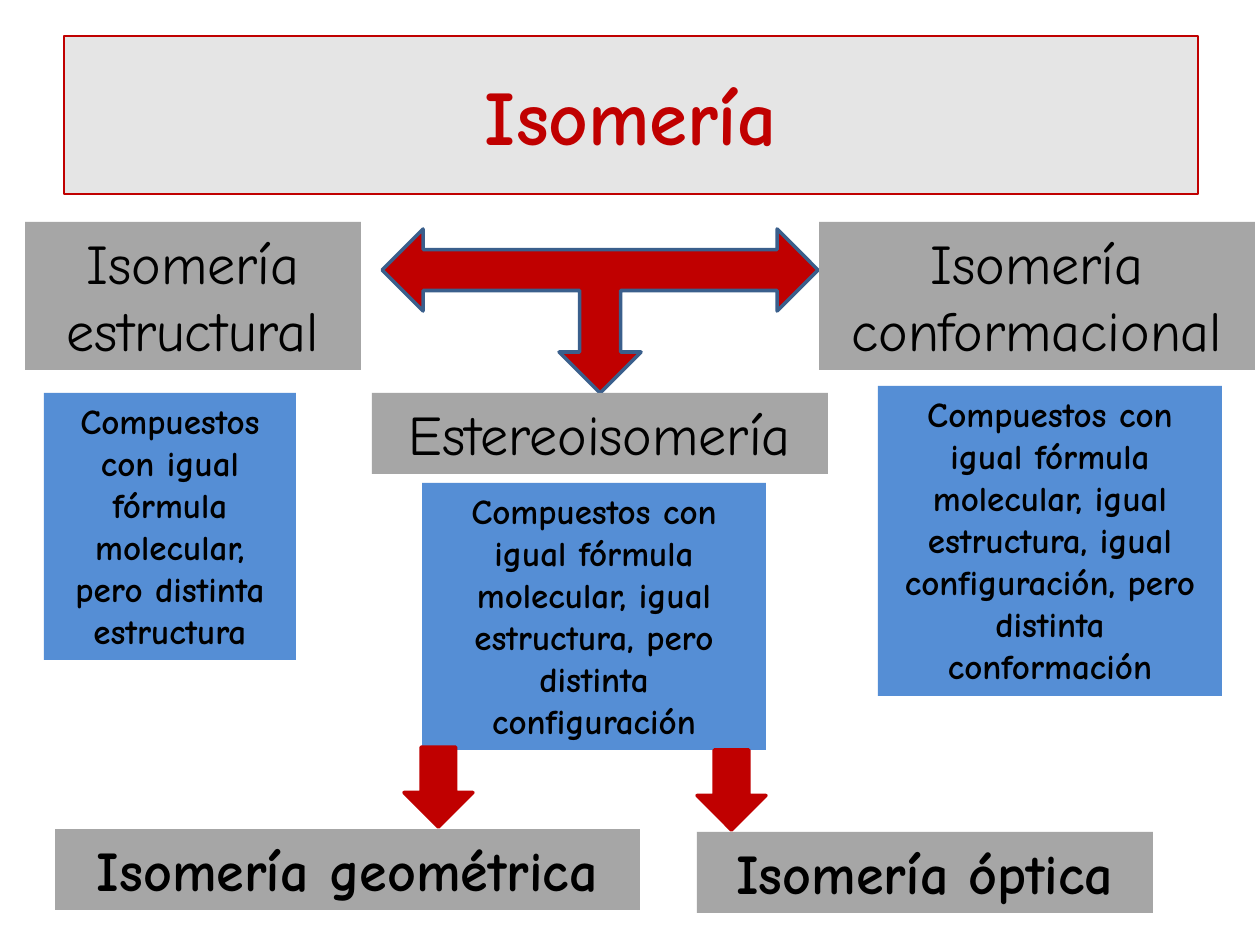
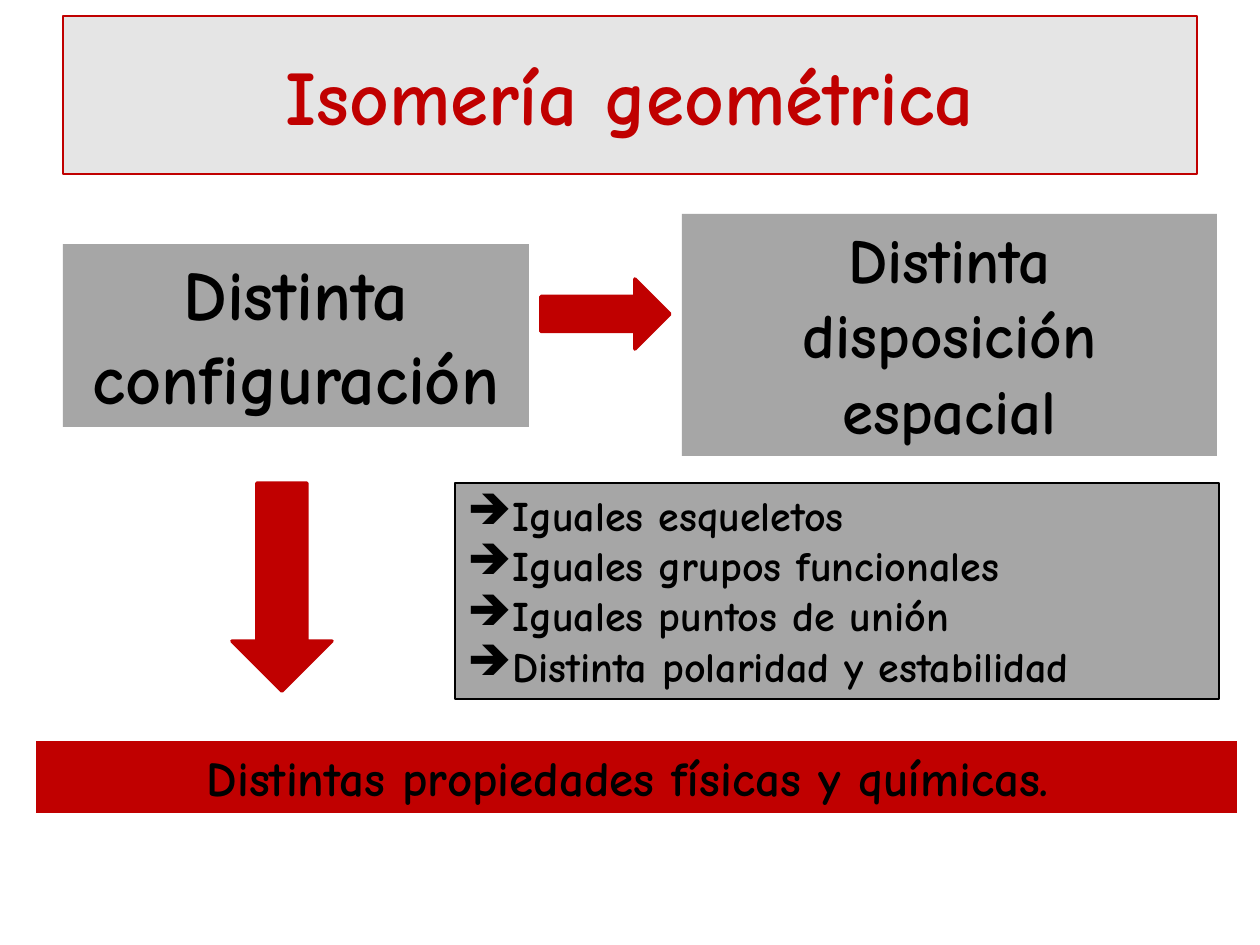
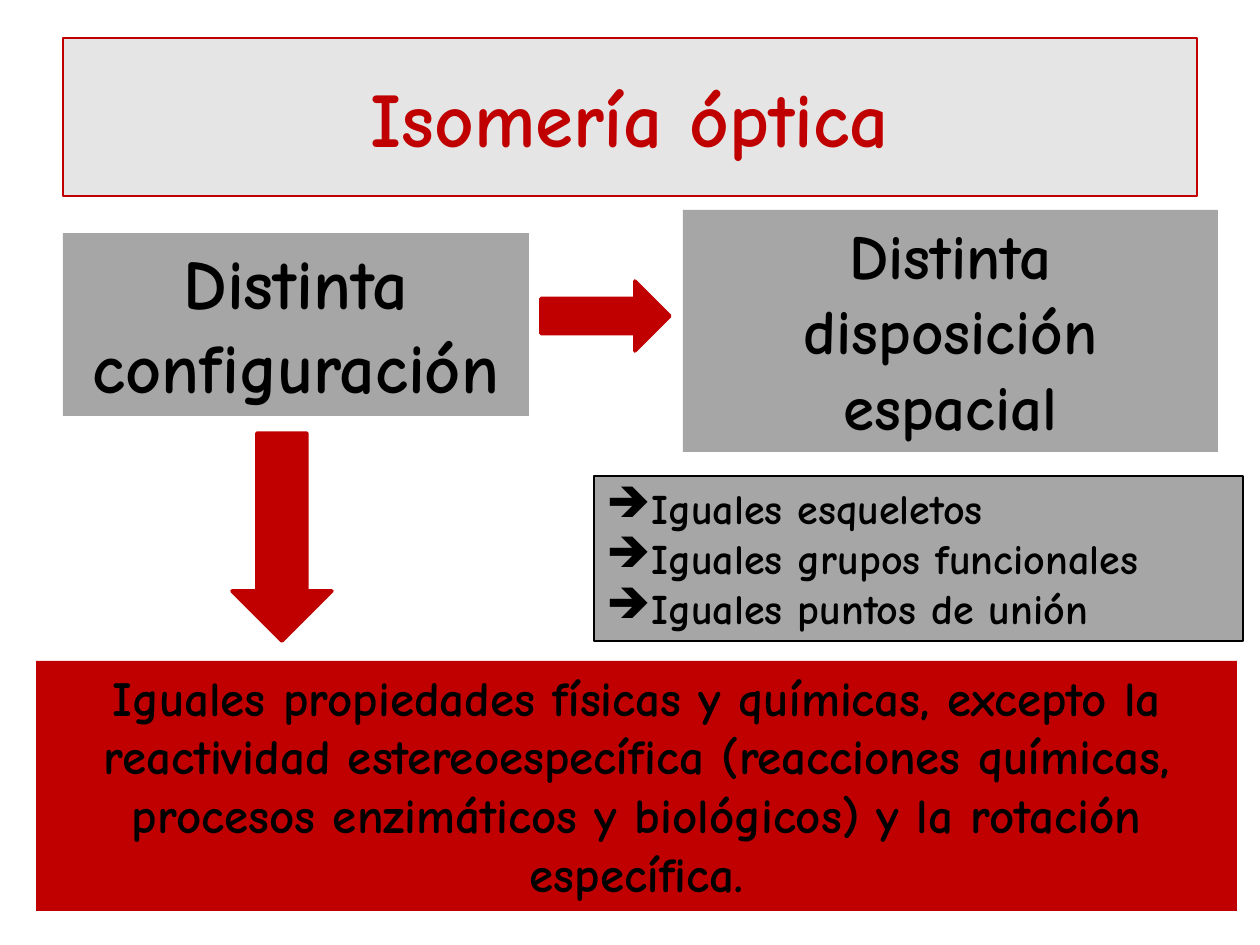
from dataclasses import dataclass

from lxml import etree
from pptx import Presentation
from pptx.dml.color import RGBColor
from pptx.enum.shapes import MSO_SHAPE
from pptx.enum.text import MSO_ANCHOR, MSO_AUTO_SIZE, PP_ALIGN
from pptx.oxml.ns import qn
from pptx.util import Pt

RECT = MSO_SHAPE.RECTANGLE
DOWN, RIGHT = MSO_SHAPE.DOWN_ARROW, MSO_SHAPE.RIGHT_ARROW
TEE = MSO_SHAPE.LEFT_RIGHT_UP_ARROW
CENTER, LEFT = PP_ALIGN.CENTER, PP_ALIGN.LEFT
MIDDLE, TOP = MSO_ANCHOR.MIDDLE, MSO_ANCHOR.TOP
FIT_SHAPE, NO_FIT = MSO_AUTO_SIZE.SHAPE_TO_FIT_TEXT, MSO_AUTO_SIZE.NONE

EMU_PER_PX = 914400 / 126
SLIDE_SIZE = (1260, 945)


@dataclass(frozen=True)
class Theme:
    font: str = "Comic Neue"
    red: str = "C00000"
    gray: str = "A6A6A6"
    blue: str = "558ED5"
    navy: str = "3A5F8C"
    black: str = "000000"
    title: int = 44
    cause: int = 40
    effect: int = 36
    branch: int = 32
    result: int = 28
    shared: int = 24
    definition: int = 20
    thin: float = 0.75
    thick: float = 2
    title_alpha: int = 29
    bullet: str = "➔"
    bullet_indent: int = 39


T = Theme()

# Boxes are (left, top, width, height) in px.
OVERVIEW = {
    "title": ("Isomería", (64, 36, 1134, 158)),
    "tee": (382, 229, 436, 164),
    "branches": [
        ("Isomería estructural", (25, 222, 336, 148)),
        ("Estereoisomería", (372, 393, 456, 81)),
        ("Isomería conformacional", (819, 222, 436, 148)),
    ],
    "definitions": [
        ("Compuestos con igual fórmula molecular, pero distinta estructura",
         (44, 393, 252, 267)),
        ("Compuestos con igual fórmula molecular, igual estructura, "
         "pero distinta configuración", (422, 483, 344, 267)),
        ("Compuestos con igual fórmula molecular, igual estructura, "
         "igual configuración, pero distinta conformación",
         (878, 386, 344, 310)),
    ],
    "arrows": [(404, 747, 69, 80), (697, 750, 69, 80)],
    "subtypes": [
        ("Isomería geométrica", (55, 829, 585, 81)),
        ("Isomería óptica", (697, 832, 456, 81)),
    ],
}

CAUSE, EFFECT = "Distinta configuración", "Distinta disposición espacial"
SHARED = ["Iguales esqueletos", "Iguales grupos funcionales",
          "Iguales puntos de unión"]

SUBTYPES = [
    {
        "title": ("Isomería geométrica", (63, 16, 1134, 158)),
        "cause": (63, 244, 466, 183),
        "right": (541, 279, 129, 70),
        "effect": (682, 214, 535, 242),
        "down": (232, 483, 100, 208),
        "shared": (SHARED + ["Distinta polaridad y estabilidad"],
                   (455, 483, 764, 216)),
        "result": ("Distintas propiedades físicas y químicas. ",
                   (36, 741, 1201, 72)),
    },
    {
        "title": ("Isomería óptica", (63, 38, 1134, 158)),
        "cause": (63, 233, 466, 183),
        "right": (541, 281, 129, 70),
        "effect": (683, 210, 535, 242),
        "down": (232, 433, 100, 208),
        "shared": (SHARED, (594, 476, 649, 165)),
        "result": ("Iguales propiedades físicas y químicas, excepto la "
                   "reactividad estereoespecífica (reacciones químicas, "
                   "procesos enzimáticos y biológicos) y la rotación "
                   "específica.", (36, 661, 1201, 250)),
    },
]


def px(n):
    return round(n * EMU_PER_PX)


def add_shape(s, kind, box, fill, line=None, weight=T.thick):
    sp = s.shapes.add_shape(kind, *map(px, box))
    sp.shadow.inherit = False
    sp.fill.solid()
    sp.fill.fore_color.rgb = RGBColor.from_string(fill)
    if line:
        sp.line.color.rgb = RGBColor.from_string(line)
        sp.line.width = Pt(weight)
    else:
        sp.line.fill.background()
    return sp


def add_bullet(p):
    pPr = p._p.get_or_add_pPr()
    pPr.set("marL", str(px(T.bullet_indent)))
    pPr.set("indent", str(-px(T.bullet_indent)))
    etree.SubElement(pPr, qn("a:buChar")).set("char", T.bullet)


def set_text(sp, lines, size, color=T.black, bold=True, bullets=False,
             anchor=TOP, fit=FIT_SHAPE):
    tf = sp.text_frame
    tf.word_wrap = True
    tf.auto_size = fit
    tf.vertical_anchor = anchor
    tf.text = "\n".join(lines)
    for p in tf.paragraphs:
        p.alignment = LEFT if bullets else CENTER
        if bullets:
            add_bullet(p)
        for r in p.runs:
            r.font.name = T.font
            r.font.size = Pt(size)
            r.font.bold = bold
            r.font.color.rgb = RGBColor.from_string(color)


def add_label(s, text, box, size, fill=T.gray, bold=True):
    set_text(add_shape(s, RECT, box, fill), [text], size, bold=bold)


def add_title(s, text, box):
    sp = add_shape(s, RECT, box, T.gray, T.red, T.thin)
    color = sp._element.spPr.find(qn("a:solidFill"))[0]
    etree.SubElement(color, qn("a:alpha")).set("val", str(T.title_alpha * 1000))
    set_text(sp, [text], T.title, T.red, anchor=MIDDLE, fit=NO_FIT)


def add_arrow(s, kind, box, line=T.red):
    return add_shape(s, kind, box, T.red, line)


def build_overview(s, data):
    add_title(s, *data["title"])
    add_arrow(s, TEE, data["tee"], T.navy).rotation = 180
    for text, box in data["branches"]:
        add_label(s, text, box, T.branch, bold=False)
    for text, box in data["definitions"]:
        add_label(s, text, box, T.definition, T.blue)
    for box in data["arrows"]:
        add_arrow(s, DOWN, box)
    for text, box in data["subtypes"]:
        add_label(s, text, box, T.branch)


def build_subtype(s, data):
    add_title(s, *data["title"])
    add_label(s, CAUSE, data["cause"], T.cause)
    add_arrow(s, RIGHT, data["right"])
    add_label(s, EFFECT, data["effect"], T.effect)
    lines, box = data["shared"]
    sp = add_shape(s, RECT, box, T.gray, T.black, T.thin)
    set_text(sp, lines, T.shared, bullets=True)
    add_arrow(s, DOWN, data["down"])
    add_label(s, *data["result"], T.result, T.red)


def main():
    prs = Presentation()
    prs.slide_width, prs.slide_height = map(px, SLIDE_SIZE)
    blank = prs.slide_layouts[6]
    build_overview(prs.slides.add_slide(blank), OVERVIEW)
    for data in SUBTYPES:
        build_subtype(prs.slides.add_slide(blank), data)
    prs.save("out.pptx")


if __name__ == "__main__":
    main()
